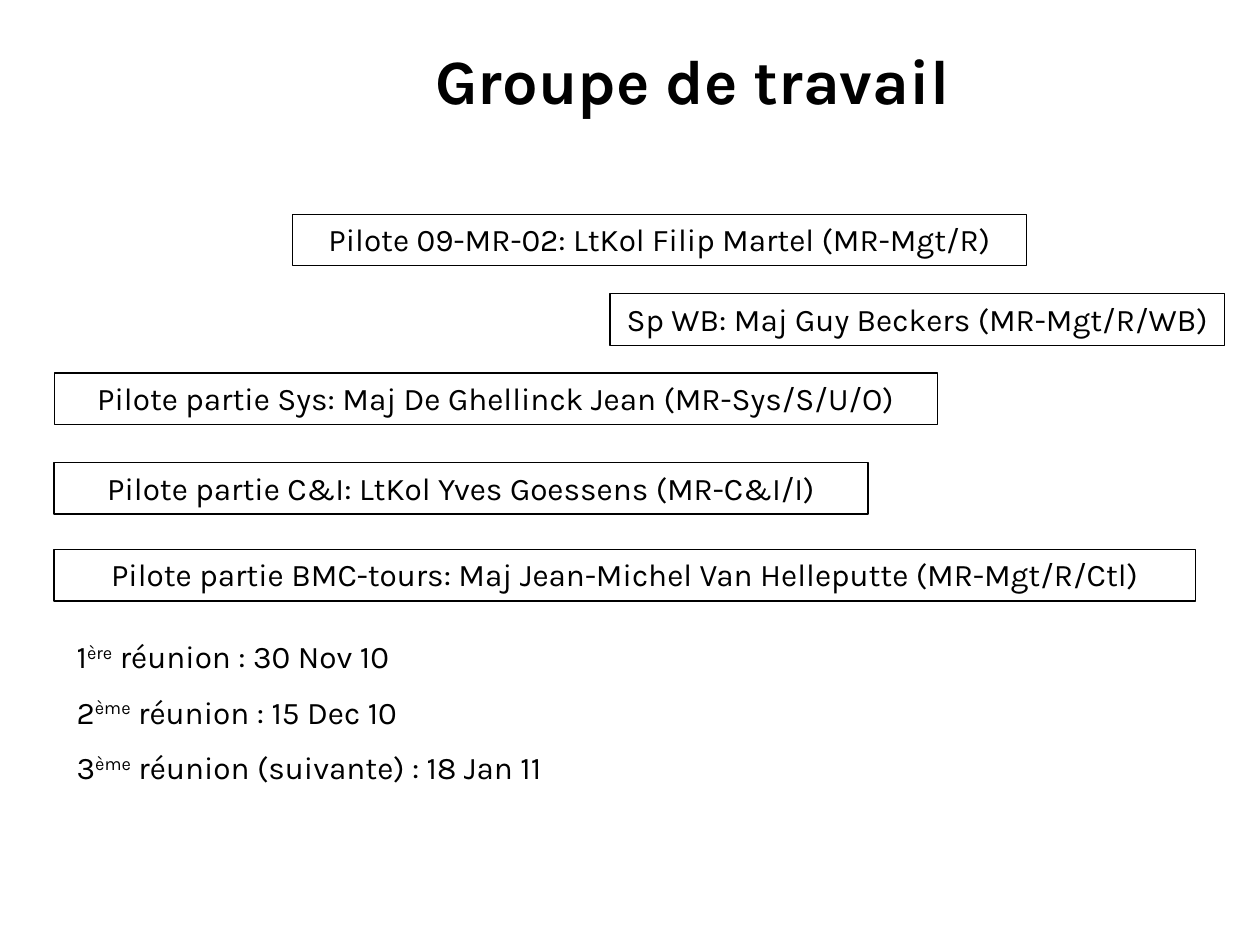
"""Build the "Groupe de travail" slide: pilots in framed boxes and meeting dates."""
from pptx import Presentation
from pptx.dml.color import RGBColor
from pptx.enum.shapes import MSO_SHAPE
from pptx.enum.text import MSO_ANCHOR, MSO_AUTO_SIZE, PP_ALIGN
from pptx.util import Inches, Pt

COLORS = {"ink": "000000", "paper": "FFFFFF"}
FONT = "Karla"
ROW_HEIGHT = 5.47

TITLE = ("Groupe de travail", (13, 3.73, 83.9, 9.33))
# Each pilot: wording, then left, top and width as percentages of the slide.
PILOTS = [
    ("Pilote 09-MR-02: LtKol Filip Martel (MR-Mgt/R)", 23.2, 22.67, 58.3),
    ("Sp WB: Maj Guy Beckers (MR-Mgt/R/WB)", 48.4, 31.07, 48.8),
    ("Pilote partie Sys: Maj De Ghellinck Jean (MR-Sys/S/U/O)", 4.3, 39.47, 70.1),
    ("Pilote partie C&I: LtKol Yves Goessens (MR-C&I/I)", 4.3, 48.93, 64.6),
    ("Pilote partie BMC-tours: Maj Jean-Michel Van Helleputte (MR-Mgt/R/Ctl)", 4.3, 58.13, 90.6),
]
MEETINGS = [
    ("1", "ère", " réunion : 30 Nov 10"),
    ("2", "ème", " réunion : 15 Dec 10"),
    ("3", "ème", " réunion (suivante) : 18 Jan 11"),
]
MEETINGS_AREA = (5.1, 66.8, 47.3, 17.33)

prs = Presentation()
prs.slide_width, prs.slide_height = Inches(10), Inches(7.5)
slide = prs.slides.add_slide(prs.slide_layouts[6])
slide.background.fill.solid()
slide.background.fill.fore_color.rgb = RGBColor.from_string(COLORS["paper"])


def add_text(paragraphs, area, size=18, bold=False, align=PP_ALIGN.LEFT, framed=False, gap=10):
    """Place paragraphs, each a tuple of normal and raised parts in turn."""
    left, top, width, height = area
    place = (
        int(prs.slide_width * left / 100), int(prs.slide_height * top / 100),
        int(prs.slide_width * width / 100), int(prs.slide_height * height / 100),
    )
    if framed:
        box = slide.shapes.add_shape(MSO_SHAPE.RECTANGLE, *place)
        box.shadow.inherit = False
        box.fill.background()
        box.line.color.rgb = RGBColor.from_string(COLORS["ink"])
        box.line.width = Pt(0.75)
    else:
        box = slide.shapes.add_textbox(*place)
    frame = box.text_frame
    frame.word_wrap = True
    frame.auto_size = MSO_AUTO_SIZE.SHAPE_TO_FIT_TEXT
    frame.vertical_anchor = MSO_ANCHOR.TOP
    for row, parts in enumerate(paragraphs):
        paragraph = frame.add_paragraph() if row else frame.paragraphs[0]
        paragraph.alignment = align
        if row:
            paragraph.space_before = Pt(gap)
        for position, part in enumerate(parts):
            run = paragraph.add_run()
            run.text = part
            run.font.name, run.font.size, run.font.bold = FONT, Pt(size), bold
            run.font.color.rgb = RGBColor.from_string(COLORS["ink"])
            if position % 2:
                run._r.get_or_add_rPr().set("baseline", "30000")


title, title_area = TITLE
add_text([(title,)], title_area, size=36, bold=True, align=PP_ALIGN.CENTER)
for pilot, left, top, width in PILOTS:
    add_text([(pilot,)], (left, top, width, ROW_HEIGHT), align=PP_ALIGN.CENTER, framed=True)
add_text(MEETINGS, MEETINGS_AREA)

prs.save("out.pptx")
